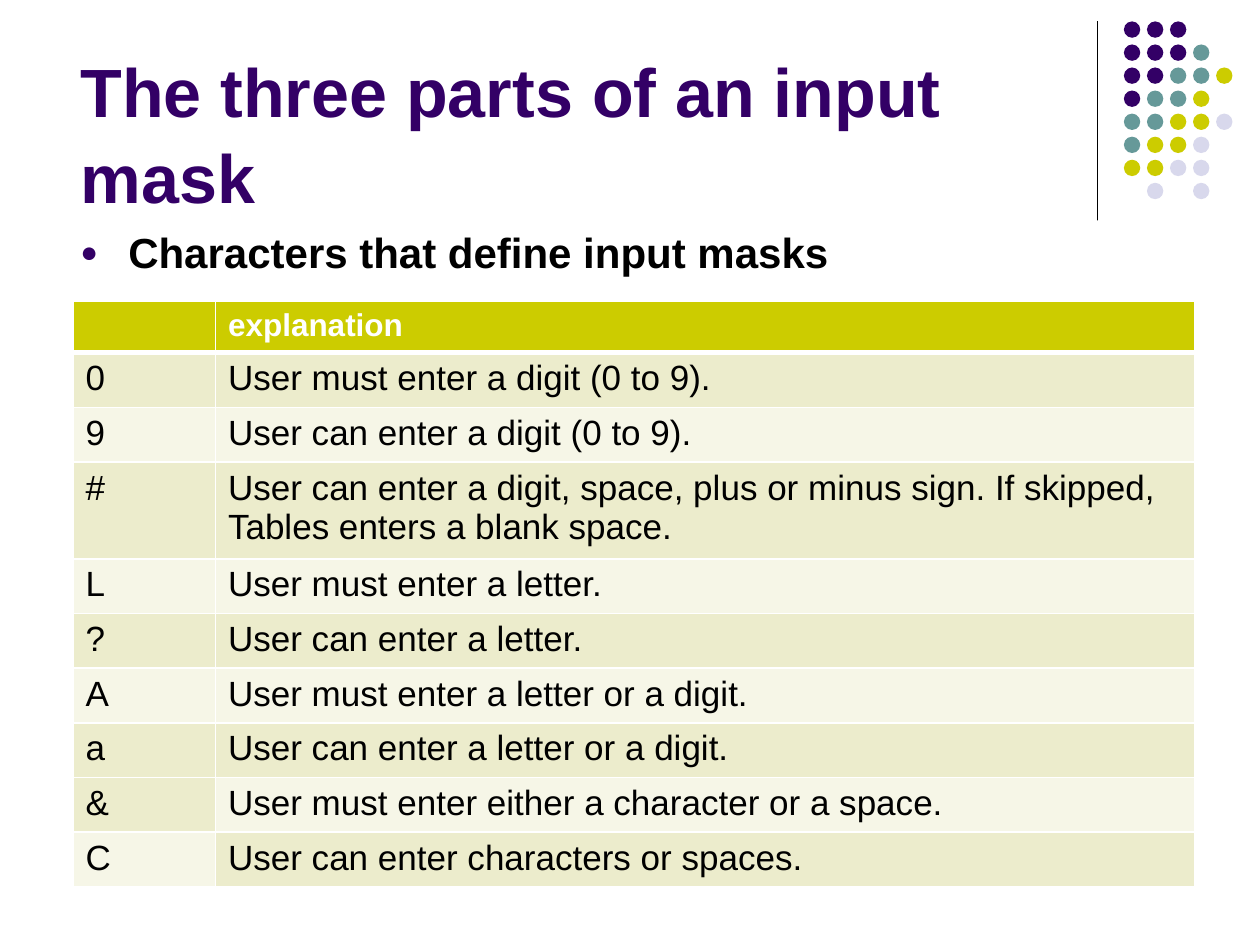
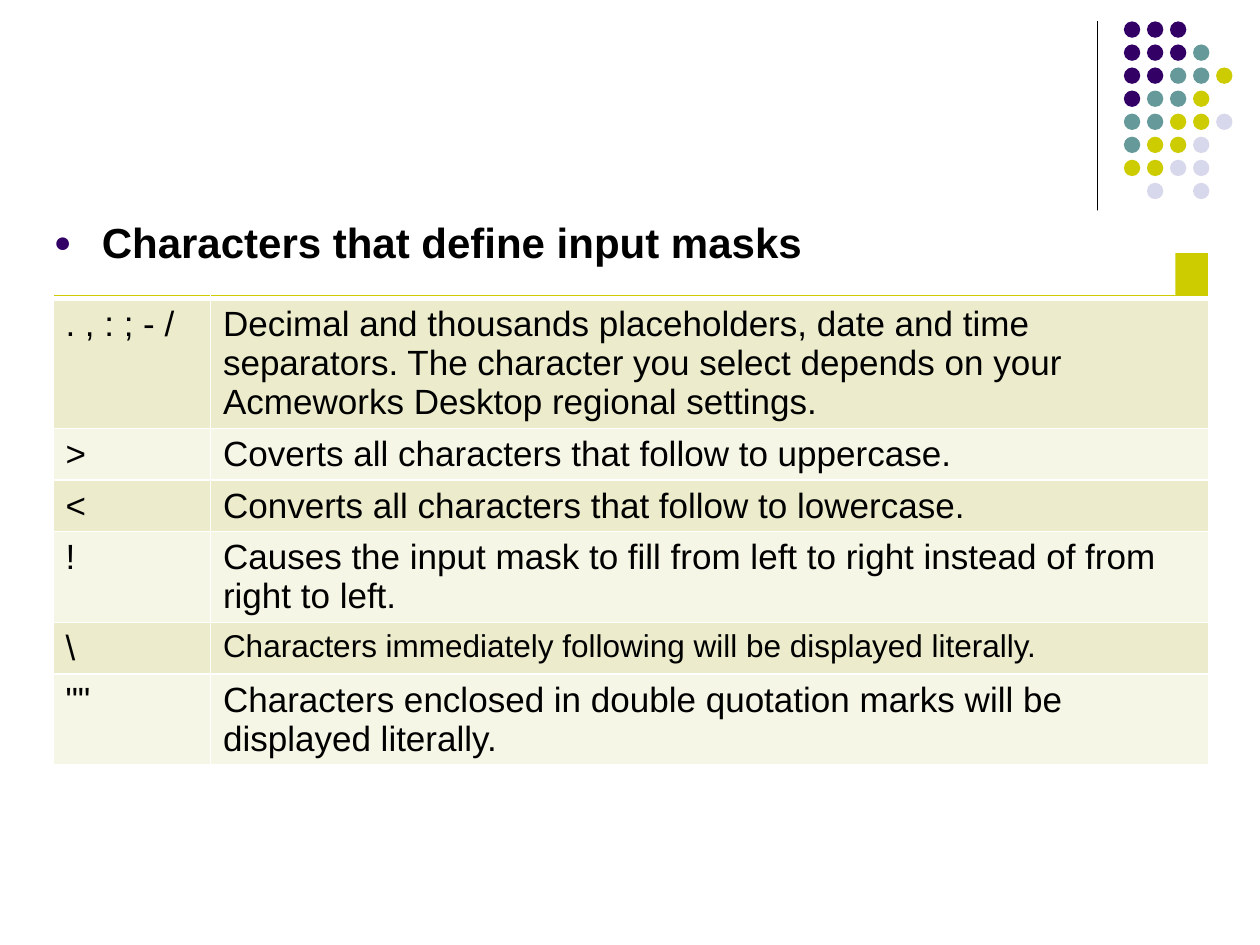
import pptx
import pptx.dml.color
import pptx.enum.shapes
import pptx.enum.text
import pptx.oxml.ns
import pptx.util
from lxml import etree

RGBColor = pptx.dml.color.RGBColor
Inches = pptx.util.Inches
Pt = pptx.util.Pt
SHAPES = pptx.enum.shapes.MSO_SHAPE
ANCHOR = pptx.enum.text.MSO_ANCHOR
qn = pptx.oxml.ns.qn

# Colours and font
PURPLE = RGBColor(0x33, 0x00, 0x66)
TEAL = RGBColor(0x66, 0x99, 0x99)
OLIVE = RGBColor(0xCC, 0xCC, 0x00)
LILAC = RGBColor(0xD8, 0xD8, 0xEC)
BLACK = RGBColor(0x00, 0x00, 0x00)
WHITE = RGBColor(0xFF, 0xFF, 0xFF)
STRIPES = (RGBColor(0xEC, 0xEC, 0xCC), RGBColor(0xF6, 0xF6, 0xE7))
FONT = "Arial"

# Content
TITLE = "The three parts of an input mask"
SUBTITLE = "Characters that define input masks"

# Each row: mask character, explanation, lines of text, explanation size
ENTRY_ROWS = [
    ("0", "User must enter a digit (0 to 9).", 1, 20),
    ("9", "User can enter a digit (0 to 9).", 1, 20),
    ("#", "User can enter a digit, space, plus or minus sign. If skipped, "
          "Tables enters a blank space.", 2, 20),
    ("L", "User must enter a letter.", 1, 20),
    ("?", "User can enter a letter.", 1, 20),
    ("A", "User must enter a letter or a digit.", 1, 20),
    ("a", "User can enter a letter or a digit.", 1, 20),
    ("&", "User must enter either a character or a space.", 1, 20),
    ("C", "User can enter characters or spaces.", 1, 20),
]
FORMAT_ROWS = [
    (". , : ; - /", "Decimal and thousands placeholders, date and time "
                    "separators. The character you select depends on your "
                    "Acmeworks Desktop regional settings.", 3, 20),
    (">", "Coverts all characters that follow to uppercase.", 1, 20),
    ("<", "Converts all characters that follow to lowercase.", 1, 20),
    ("!", "Causes the input mask to fill from left to right instead of from "
          "right to left.", 2, 20),
    ("\\", "Characters immediately following will be displayed literally.", 1, 18),
    ('""', "Characters enclosed in double quotation marks will be displayed "
           "literally.", 2, 20),
]

# Dot grid, one letter per dot colour
DOT_ROWS = ["PPP", "PPPT", "PPTTO", "PTTO", "TTOOL", "TOOL", "OOLL", " L L"]
DOT_COLOURS = {"P": PURPLE, "T": TEAL, "O": OLIVE, "L": LILAC}
DOT_LEFT, DOT_TOP, DOT_PITCH, DOT_SIZE = 8.92, 0.17, 0.183, 0.13

# Table rows: height of one line, and of each further line
ROW_HEIGHT, LINE_HEIGHT = 0.41, 0.31


def style_text(paragraph, text, size, colour, bold=False):
    paragraph.text = text
    font = paragraph.font
    font.name, font.size, font.bold = FONT, Pt(size), bold
    font.color.rgb = colour


def add_filled(slide, kind, box, colour):
    shape = slide.shapes.add_shape(kind, *map(Inches, box))
    shape.shadow.inherit = False
    shape.fill.solid()
    shape.fill.fore_color.rgb = colour
    shape.line.fill.background()
    return shape


def add_decoration(slide):
    """Vertical rule and dot grid in the top right corner."""
    rule = slide.shapes.add_connector(
        pptx.enum.shapes.MSO_CONNECTOR.STRAIGHT,
        Inches(8.71), Inches(0.17), Inches(8.71), Inches(1.83))
    rule.line.color.rgb = BLACK
    rule.line.width = Pt(0.75)
    etree.SubElement(rule._element.spPr, qn("a:effectLst"))
    for row, letters in enumerate(DOT_ROWS):
        for column, letter in enumerate(letters):
            if letter in DOT_COLOURS:
                box = (DOT_LEFT + column * DOT_PITCH, DOT_TOP + row * DOT_PITCH,
                       DOT_SIZE, DOT_SIZE)
                add_filled(slide, SHAPES.OVAL, box, DOT_COLOURS[letter])


def add_title(slide):
    box = slide.shapes.add_textbox(Inches(0.54), Inches(0.25), Inches(8.25), Inches(1.52))
    frame = box.text_frame
    frame.word_wrap = True
    frame.vertical_anchor = ANCHOR.BOTTOM
    paragraph = frame.paragraphs[0]
    style_text(paragraph, TITLE, 39, PURPLE, bold=True)
    paragraph.line_spacing = 1.05


def add_subtitle(slide, left, top):
    """White band with one bulleted line."""
    frame = add_filled(slide, SHAPES.RECTANGLE, (left, top, 9, 0.67), WHITE).text_frame
    frame.word_wrap = True
    frame.vertical_anchor = ANCHOR.TOP
    paragraph = frame.paragraphs[0]
    style_text(paragraph, SUBTITLE, 24, BLACK, bold=True)
    paragraph.alignment = pptx.enum.text.PP_ALIGN.LEFT
    paragraph.space_before = Pt(3)
    properties = paragraph._p.get_or_add_pPr()
    properties.set("marL", str(Inches(0.38)))
    properties.set("indent", str(-Inches(0.38)))
    colour = etree.SubElement(properties, qn("a:buClr"))
    etree.SubElement(colour, qn("a:srgbClr"), val=str(PURPLE))
    etree.SubElement(properties, qn("a:buSzPct"), val="70000")
    etree.SubElement(properties, qn("a:buFont"), typeface=FONT)
    etree.SubElement(properties, qn("a:buChar"), char="●")
    # Schema order: the run defaults follow the bullet
    for defaults in properties.findall(qn("a:defRPr")):
        properties.append(defaults)


def set_borders(cell, widths):
    """White borders; widths in points for left, right, top, bottom."""
    properties = cell._tc.get_or_add_tcPr()
    for index, (side, width) in enumerate(zip("LRTB", widths)):
        line = etree.Element(qn("a:ln" + side), w=str(Pt(width)))
        fill = etree.SubElement(line, qn("a:solidFill"))
        etree.SubElement(fill, qn("a:srgbClr"), val=str(WHITE))
        properties.insert(index, line)


def fill_cell(cell, text, size, colour, background, bold=False, borders=(1, 1, 1, 1)):
    style_text(cell.text_frame.paragraphs[0], text, size, colour, bold)
    cell.fill.solid()
    cell.fill.fore_color.rgb = background
    set_borders(cell, borders)


def add_mask_table(slide, left, top, widths, header, header_height, rows, shifted=()):
    """Characters named in shifted have the stripe colours swapped."""
    heights = [header_height] + [ROW_HEIGHT + LINE_HEIGHT * (row[2] - 1) for row in rows]
    table = slide.shapes.add_table(
        len(heights), len(widths), Inches(left), Inches(top),
        Inches(sum(widths)), Inches(sum(heights))).table
    for column, width in zip(table.columns, widths):
        column.width = Inches(width)
    for row, height in zip(table.rows, heights):
        row.height = Inches(height)
    for column, text in enumerate(header):
        fill_cell(table.cell(0, column), text, 18 if text else 12, WHITE, OLIVE,
                  bold=True, borders=(1, 1, 1, 3))
    for index, (character, explanation, _, size) in enumerate(rows):
        top_border = 3 if index == 0 else 1
        borders = (1, 1, top_border, 1)
        swap = character in shifted
        fill_cell(table.cell(index + 1, 0), character, 20, BLACK,
                  STRIPES[(index + swap) % 2], borders=borders)
        fill_cell(table.cell(index + 1, 1), explanation, size, BLACK,
                  STRIPES[index % 2], borders=borders)


def main():
    presentation = pptx.Presentation()
    presentation.slide_width, presentation.slide_height = Inches(10), Inches(7.5)
    slides = [presentation.slides.add_slide(presentation.slide_layouts[6])
              for _ in range(2)]
    for slide in slides:
        add_decoration(slide)
    entry_slide, format_slide = slides

    # Slide 1: characters a user enters
    add_title(entry_slide)
    add_subtitle(entry_slide, 0.54, 1.75)
    add_mask_table(entry_slide, 0.58, 2.39, (1.13, 7.77), ("", "explanation"), 0.41,
                   ENTRY_ROWS, shifted=("&", "C"))

    # Slide 2: formatting characters, the band lies over the table header
    add_mask_table(format_slide, 0.42, 2, (1.25, 7.92), ("", ""), 0.37, FORMAT_ROWS)
    add_subtitle(format_slide, 0.33, 1.67)

    presentation.save("out.pptx")


if __name__ == "__main__":
    main()
